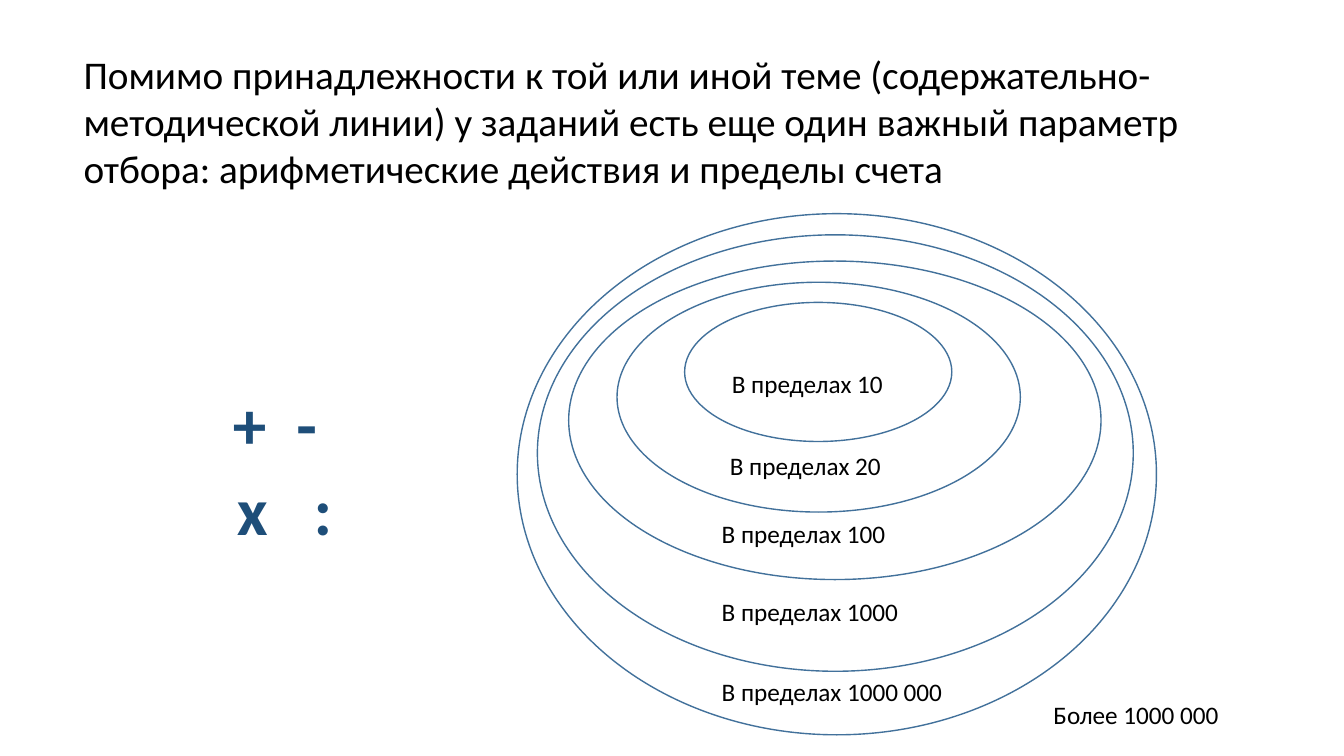
"""Build a slide of nested counting ranges beside the arithmetic signs."""
from dataclasses import dataclass

from lxml.etree import SubElement
from pptx import Presentation
from pptx.dml.color import RGBColor
from pptx.enum.shapes import MSO_SHAPE as Shape
from pptx.enum.text import MSO_ANCHOR as Anchor
from pptx.oxml.ns import qn
from pptx.slide import Slide
from pptx.util import Inches, Pt


@dataclass(frozen=True)
class Theme:
    """Colours and type sizes of the slide."""
    font: str = "Calibri"
    text: RGBColor = RGBColor(0x00, 0x00, 0x00)
    sign: RGBColor = RGBColor(0x1E, 0x4E, 0x79)
    outline: RGBColor = RGBColor(0x42, 0x71, 0x9B)
    outline_width: float = 1
    title_size: int = 28
    label_size: int = 18
    sign_size: int = 48


@dataclass(frozen=True)
class Box:
    """A rectangle in inches."""
    left: float
    top: float
    width: float
    height: float

    def lengths(self) -> tuple[Inches, ...]:
        """Return the four sides as slide lengths."""
        return tuple(map(Inches, (self.left, self.top, self.width, self.height)))


@dataclass(frozen=True)
class Label:
    """A text with its place and look."""
    text: str
    box: Box
    size: int
    color: RGBColor
    bold: bool = False
    anchor: Anchor = Anchor.TOP
    indent: float = 0.1
    tab: float = 0


@dataclass(frozen=True)
class CountingRange:
    """An oval and the label of its upper limit."""
    limit: str
    oval: Box
    label: Box


THEME = Theme()
TITLE = Label(
    "Помимо принадлежности к той или иной теме (содержательно-методической линии) "
    "у заданий есть еще один важный параметр отбора: арифметические действия и пределы счета",
    Box(0.73, 0.57, 12.39, 1.25), THEME.title_size, THEME.text, anchor=Anchor.MIDDLE)
BEYOND = Label("Более 1000 000", Box(10.35, 6.89, 2.85, 0.4), THEME.label_size, THEME.text)
SIGNS = [
    Label("+\t-", Box(1.32, 3.57, 2.81, 1.25), THEME.sign_size, THEME.sign,
          True, Anchor.MIDDLE, 0.99, 0.63),
    Label("х\t:", Box(1.26, 4.42, 2.81, 1.25), THEME.sign_size, THEME.sign,
          True, Anchor.MIDDLE, 1.09, 0.76),
]
RANGES = [
    CountingRange("10", Box(6.79, 3, 2.65, 1.38), Box(7.16, 3.6, 1.71, 0.4)),
    CountingRange("20", Box(6.12, 2.8, 4, 2.28), Box(7.14, 4.42, 1.71, 0.4)),
    CountingRange("100", Box(5.64, 2.59, 5.28, 3.16), Box(7.06, 5.09, 2.16, 0.4)),
    CountingRange("1000", Box(5.33, 2.33, 5.91, 4.33), Box(7.06, 5.87, 2.33, 0.4)),
    CountingRange("1000 000", Box(5.13, 2.12, 6.34, 5.17), Box(7.06, 6.66, 2.85, 0.4)),
]


def draw_oval(slide: Slide, box: Box) -> None:
    """Draw an unfilled oval."""
    oval = slide.shapes.add_shape(Shape.OVAL, *box.lengths())
    oval.shadow.inherit = False
    oval.fill.background()
    oval.line.color.rgb = THEME.outline
    oval.line.width = Pt(THEME.outline_width)


def draw_label(slide: Slide, label: Label) -> None:
    """Draw a wrapped text, with a tab stop if it has one."""
    frame = slide.shapes.add_textbox(*label.box.lengths()).text_frame
    frame.word_wrap = True
    frame.vertical_anchor = label.anchor
    frame.margin_left = Inches(label.indent)
    paragraph = frame.paragraphs[0]
    paragraph.text = label.text
    font = paragraph.font
    font.name = THEME.font
    font.size = Pt(label.size)
    font.bold = label.bold
    font.color.rgb = label.color
    if label.tab:
        properties = paragraph._p.get_or_add_pPr()
        stops = SubElement(properties, qn("a:tabLst"))
        SubElement(stops, qn("a:tab"), pos=str(Inches(label.tab)), algn="l")
        properties.insert(0, stops)


def main() -> None:
    """Build and save the presentation."""
    presentation = Presentation()
    presentation.slide_width = Inches(13.33)
    presentation.slide_height = Inches(7.5)
    slide = presentation.slides.add_slide(presentation.slide_layouts[6])
    for counting in RANGES:
        draw_oval(slide, counting.oval)
        draw_label(slide, Label(f"В пределах {counting.limit}", counting.label,
                                THEME.label_size, THEME.text))
    for label in (*SIGNS, TITLE, BEYOND):
        draw_label(slide, label)
    presentation.save("out.pptx")


if __name__ == "__main__":
    main()
